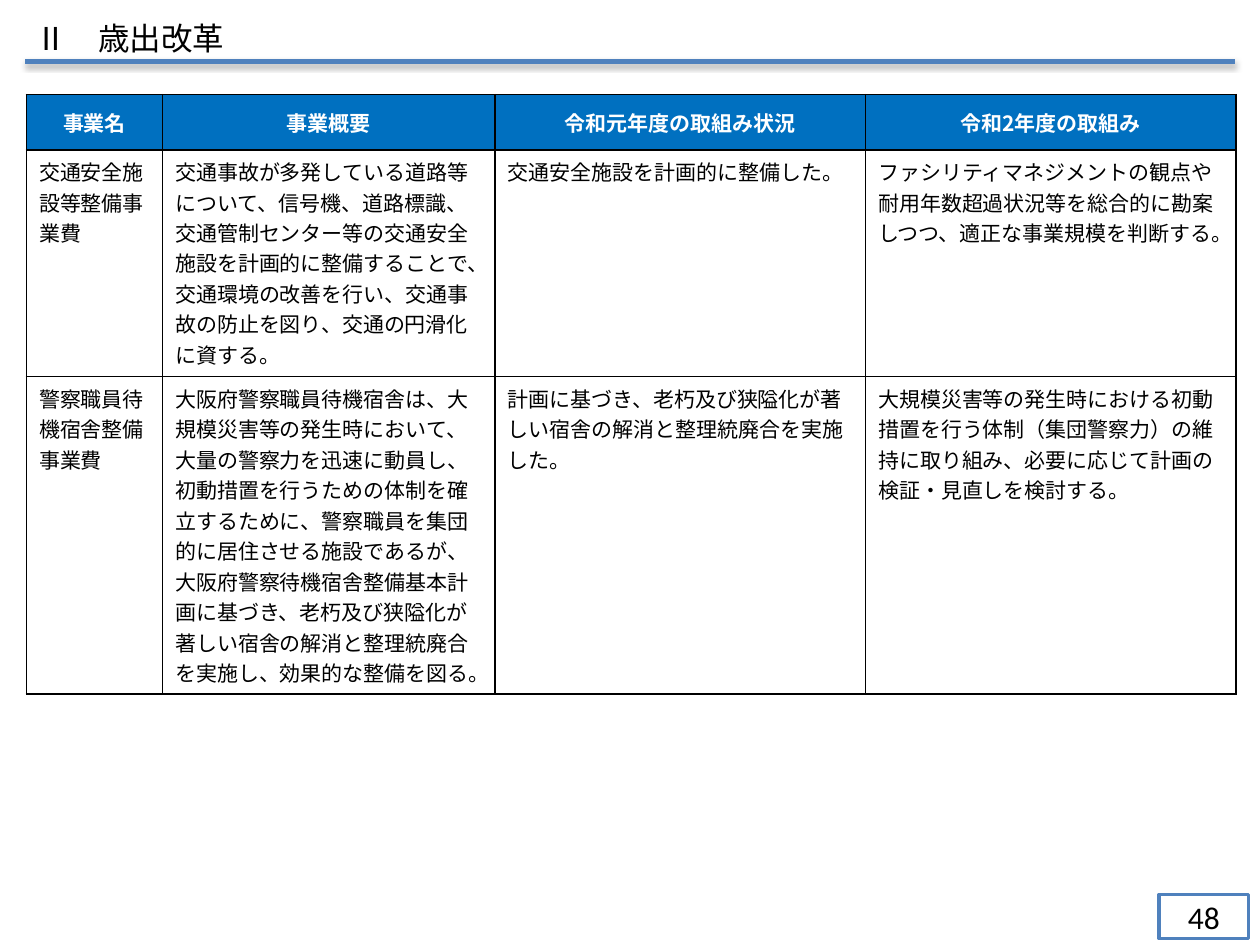
from typing import NamedTuple

from lxml import etree
from pptx import Presentation
from pptx.dml.color import RGBColor
from pptx.enum.lang import MSO_LANGUAGE_ID
from pptx.enum.shapes import MSO_CONNECTOR, MSO_SHAPE
from pptx.enum.text import MSO_ANCHOR, MSO_AUTO_SIZE, PP_ALIGN
from pptx.oxml.ns import qn
from pptx.util import Inches, Pt

LEFT, CENTER = PP_ALIGN.LEFT, PP_ALIGN.CENTER
TOP, MIDDLE = MSO_ANCHOR.TOP, MSO_ANCHOR.MIDDLE
FIT_TEXT = MSO_AUTO_SIZE.SHAPE_TO_FIT_TEXT
STRAIGHT, RECTANGLE = MSO_CONNECTOR.STRAIGHT, MSO_SHAPE.RECTANGLE
JAPANESE = MSO_LANGUAGE_ID.JAPANESE

COLORS = {"black": "000000", "white": "FFFFFF", "header": "0070C0", "accent": "4F81BD"}
JP_FONT, LATIN_FONT = "Noto Sans CJK JP", "Calibri"
TITLE_ONLY = 5
WIDTH, HEIGHT = Inches(10), Inches(7.5)
MARGIN = 0.02  # share of the slide width
COLUMNS = (1.08, 2.64, 2.94, 2.94)
ROWS = (0.44, 1.8, 2.52)  # tall enough for the longest description in each row


class TextStyle(NamedTuple):
    size: int
    color: str = "black"
    bold: bool = False
    font: str = JP_FONT
    align: PP_ALIGN = LEFT
    anchor: MSO_ANCHOR = TOP


class Project(NamedTuple):
    name: str
    outline: str
    progress: str
    plan: str


TITLE = TextStyle(18)
HEADER = TextStyle(12, "white", True, align=CENTER, anchor=MIDDLE)
BODY = TextStyle(12)
PAGE = TextStyle(18, font=LATIN_FONT, align=CENTER, anchor=MIDDLE)

HEADINGS = Project("事業名", "事業概要", "令和元年度の取組み状況", "令和2年度の取組み")
PROJECTS = (
    Project(
        "交通安全施設等整備事業費",
        "交通事故が多発している道路等について、信号機、道路標識、交通管制センター等の"
        "交通安全施設を計画的に整備することで、交通環境の改善を行い、交通事故の防止を図り、"
        "交通の円滑化に資する。",
        "交通安全施設を計画的に整備した。",
        "ファシリティマネジメントの観点や耐用年数超過状況等を総合的に勘案しつつ、"
        "適正な事業規模を判断する。",
    ),
    Project(
        "警察職員待機宿舎整備事業費",
        "大阪府警察職員待機宿舎は、大規模災害等の発生時において、大量の警察力を迅速に動員し、"
        "初動措置を行うための体制を確立するために、警察職員を集団的に居住させる施設であるが、"
        "大阪府警察待機宿舎整備基本計画に基づき、老朽及び狭隘化が著しい宿舎の解消と"
        "整理統廃合を実施し、効果的な整備を図る。",
        "計画に基づき、老朽及び狭隘化が著しい宿舎の解消と整理統廃合を実施した。",
        "大規模災害等の発生時における初動措置を行う体制（集団警察力）の維持に取り組み、"
        "必要に応じて計画の検証・見直しを検討する。",
    ),
)


def rgb(name: str) -> RGBColor:
    return RGBColor.from_string(COLORS[name])


def write(tf, text: str, style: TextStyle) -> None:
    p = tf.paragraphs[0]
    p.alignment = style.align
    r = p.add_run()
    r.text = text
    r.font.size, r.font.bold = Pt(style.size), style.bold
    r.font.color.rgb = rgb(style.color)
    r.font.name = style.font
    r.font.language_id = JAPANESE
    etree.SubElement(r.font._element, qn("a:ea"), typeface=style.font)


def add_title(s, text: str) -> None:
    sp = s.shapes.title
    sp.left, sp.top, sp.width, sp.height = Inches(0.18), Inches(0.1), Inches(8.9), Inches(0.4)
    tf = sp.text_frame
    tf.word_wrap, tf.auto_size, tf.vertical_anchor = True, FIT_TEXT, TITLE.anchor
    write(tf, text, TITLE)


def add_rule(s) -> None:
    """Draw the line under the title, with its soft shadow."""
    y = Inches(0.49)
    line = s.shapes.add_connector(STRAIGHT, int(WIDTH * MARGIN), y, int(WIDTH * (1 - MARGIN)), y)
    line.line.color.rgb, line.line.width = rgb("accent"), Pt(3)
    effects = etree.SubElement(line._element.spPr, qn("a:effectLst"))
    shadow = etree.SubElement(effects, qn("a:outerShdw"), blurRad=str(Pt(3.1)),
                              dist=str(Pt(1.8)), dir="5400000", rotWithShape="0")
    color = etree.SubElement(shadow, qn("a:srgbClr"), val=COLORS["black"])
    etree.SubElement(color, qn("a:alpha"), val="35000")


def set_borders(cell) -> None:
    """Put a thin black border on all four sides, ahead of the cell's fill."""
    tc_pr = cell._tc.get_or_add_tcPr()
    for i, side in enumerate(("lnL", "lnR", "lnT", "lnB")):
        ln = etree.Element(qn(f"a:{side}"), w=str(Pt(1)))
        fill = etree.SubElement(ln, qn("a:solidFill"))
        etree.SubElement(fill, qn("a:srgbClr"), val=COLORS["black"])
        tc_pr.insert(i, ln)


def add_project_table(s) -> None:
    table = s.shapes.add_table(len(ROWS), len(COLUMNS), Inches(0.21), Inches(0.75),
                               Inches(sum(COLUMNS)), Inches(sum(ROWS))).table
    table.horz_banding = False
    for column, width in zip(table.columns, COLUMNS):
        column.width = Inches(width)
    for row, height, project in zip(table.rows, ROWS, (HEADINGS, *PROJECTS)):
        row.height = Inches(height)
        is_header = project is HEADINGS
        style = HEADER if is_header else BODY
        for cell, text in zip(row.cells, project):
            if is_header:
                cell.fill.solid()
                cell.fill.fore_color.rgb = rgb("header")
            else:
                cell.fill.background()
            cell.vertical_anchor = style.anchor
            set_borders(cell)
            write(cell.text_frame, text, style)


def add_page_number(s, number: int) -> None:
    sp = s.shapes.add_shape(RECTANGLE, Inches(9.2), Inches(7.1), Inches(0.71), Inches(0.35))
    sp.shadow.inherit = False
    sp.fill.solid()
    sp.fill.fore_color.rgb = rgb("white")
    sp.line.color.rgb, sp.line.width = rgb("accent"), Pt(2)
    sp.text_frame.vertical_anchor = PAGE.anchor
    write(sp.text_frame, str(number), PAGE)


def main() -> None:
    prs = Presentation()
    prs.slide_width, prs.slide_height = WIDTH, HEIGHT
    s = prs.slides.add_slide(prs.slide_layouts[TITLE_ONLY])
    add_project_table(s)
    add_title(s, "Ⅱ　歳出改革")
    add_rule(s)
    add_page_number(s, 48)
    prs.save("out.pptx")


if __name__ == "__main__":
    main()
